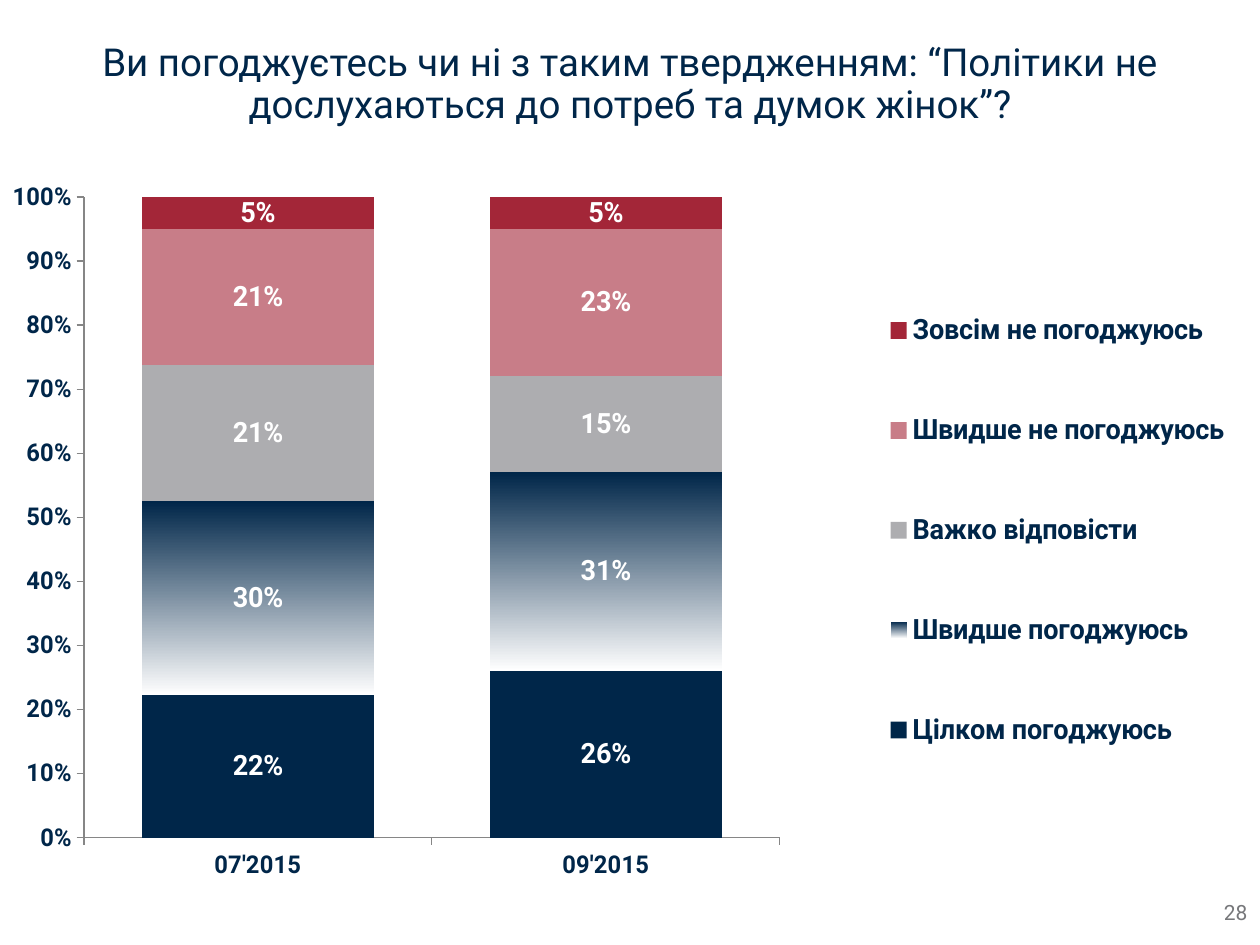
from dataclasses import dataclass

from lxml import etree
from pptx import Presentation
from pptx.chart.data import CategoryChartData
from pptx.dml.color import RGBColor
from pptx.enum.chart import XL_CHART_TYPE, XL_LEGEND_POSITION, XL_TICK_MARK
from pptx.enum.text import MSO_ANCHOR, MSO_AUTO_SIZE, PP_ALIGN
from pptx.oxml.ns import qn
from pptx.util import Inches, Pt

STACKED = XL_CHART_TYPE.COLUMN_STACKED_100
LEGEND_RIGHT = XL_LEGEND_POSITION.RIGHT
TICK_OUTSIDE = XL_TICK_MARK.OUTSIDE
TICK_NONE = XL_TICK_MARK.NONE
MIDDLE = MSO_ANCHOR.MIDDLE
NO_AUTOFIT = MSO_AUTO_SIZE.NONE
CENTER = PP_ALIGN.CENTER
RIGHT = PP_ALIGN.RIGHT

TITLE_ONLY = 5
PERCENT = "0%"
PERIODS = ["07'2015", "09'2015"]


@dataclass(frozen=True)
class Theme:
    font: str = "Roboto"
    navy: str = "002649"
    white: str = "FFFFFF"
    gray: str = "ADADB0"
    rose: str = "C87D88"
    red: str = "A32638"
    muted: str = "77787B"
    axis: str = "868686"
    title_size: int = 22
    label_size: int = 16
    axis_size: int = 14
    number_size: int = 12


THEME = Theme()

ANSWERS = [
    ("Цілком погоджуюсь", (0.22, 0.26), (THEME.navy,)),
    ("Швидше погоджуюсь", (0.30, 0.31), (THEME.navy, THEME.white)),
    ("Важко відповісти", (0.21, 0.15), (THEME.gray,)),
    ("Швидше не погоджуюсь", (0.21, 0.23), (THEME.rose,)),
    ("Зовсім не погоджуюсь", (0.05, 0.05), (THEME.red,)),
]


def format_font(font, size, color, bold=False):
    font.name = THEME.font
    font.size = Pt(size)
    font.bold = bold
    font.color.rgb = RGBColor.from_string(color)


def write_text(shape, text, size, color, align, line_spacing=1.0):
    frame = shape.text_frame
    frame.word_wrap = True
    frame.auto_size = NO_AUTOFIT
    frame.vertical_anchor = MIDDLE
    paragraph = frame.paragraphs[0]
    paragraph.alignment = align
    paragraph.line_spacing = line_spacing
    run = paragraph.add_run()
    run.text = text
    format_font(run.font, size, color)


def fill_with(fill, colors):
    if len(colors) == 1:
        fill.solid()
        fill.fore_color.rgb = RGBColor.from_string(colors[0])
        return
    fill.gradient()
    fill.gradient_angle = 270
    for stop, color in zip(fill.gradient_stops, colors):
        stop.color.rgb = RGBColor.from_string(color)


def set_layout(element, successors, box, inner=False):
    for old in element.findall(qn("c:layout")):
        element.remove(old)
    layout = etree.Element(qn("c:layout"))
    manual = etree.SubElement(layout, qn("c:manualLayout"))
    settings = [("layoutTarget", "inner")] if inner else []
    settings += [("xMode", "edge"), ("yMode", "edge")]
    settings += zip("xywh", box)
    for name, value in settings:
        etree.SubElement(manual, qn(f"c:{name}")).set("val", str(value))
    following = next(child for child in element if child.tag in map(qn, successors))
    following.addprevious(layout)


class SlideBuilder:
    def __init__(self, presentation):
        self.width = presentation.slide_width
        self.height = presentation.slide_height
        self.slide = presentation.slides.add_slide(presentation.slide_layouts[TITLE_ONLY])

    def box(self, left, top, width, height):
        return (int(left * self.width), int(top * self.height),
                int(width * self.width), int(height * self.height))

    def title(self, text, *shares):
        shape = self.slide.shapes.title
        shape.left, shape.top, shape.width, shape.height = self.box(*shares)
        write_text(shape, text, THEME.title_size, THEME.navy, CENTER, line_spacing=0.9)

    def page_number(self, text, *shares):
        shape = self.slide.shapes.add_textbox(*self.box(*shares))
        write_text(shape, text, THEME.number_size, THEME.muted, RIGHT)

    def stacked_chart(self, categories, answers, *shares):
        data = CategoryChartData(number_format=PERCENT)
        data.categories = categories
        for name, values, _ in answers:
            data.add_series(name, values)
        chart = self.slide.shapes.add_chart(STACKED, *self.box(*shares), data).chart
        chart.has_title = False
        chart.font.name = THEME.font
        plot = chart.plots[0]
        plot.gap_width = 50
        plot.overlap = 100
        for series, (_, _, colors) in zip(plot.series, answers):
            series.invert_if_negative = False
            fill_with(series.format.fill, colors)
            labels = series.data_labels
            labels.show_value = True
            labels.number_format = PERCENT
            labels.number_format_is_linked = False
            format_font(labels.font, THEME.label_size, THEME.white, bold=True)
        self.style_axes(chart)
        self.style_legend(chart)
        plot_area = chart.plots[0]._element.getparent()
        set_layout(plot_area, ["c:barChart"], (0.026, 0.043, 0.589, 0.869), inner=True)

    def style_axes(self, chart):
        for axis in (chart.category_axis, chart.value_axis):
            axis.has_major_gridlines = False
            axis.major_tick_mark = TICK_OUTSIDE
            axis.minor_tick_mark = TICK_NONE
            axis.format.line.color.rgb = RGBColor.from_string(THEME.axis)
            format_font(axis.tick_labels.font, THEME.axis_size, THEME.navy, bold=True)
        value_axis = chart.value_axis
        value_axis.minimum_scale = 0
        value_axis.maximum_scale = 1
        value_axis.major_unit = 0.1
        value_axis.tick_labels.number_format = PERCENT
        value_axis.tick_labels.number_format_is_linked = False

    def style_legend(self, chart):
        chart.has_legend = True
        legend = chart.legend
        legend.position = LEGEND_RIGHT
        legend.include_in_layout = False
        format_font(legend.font, THEME.label_size, THEME.navy, bold=True)
        set_layout(legend._element, ["c:overlay"], (0.7, 0.11, 0.3, 0.77))


def main():
    presentation = Presentation()
    presentation.slide_width = Inches(10)
    presentation.slide_height = Inches(7.5)
    builder = SlideBuilder(presentation)
    builder.title(
        "Ви погоджуєтесь чи ні з таким твердженням: “Політики не дослухаються до потреб та думок жінок”?",
        0.03, 0.07, 0.94, 0.04)
    builder.page_number("28", 0.775, 0.94, 0.225, 0.05)
    builder.stacked_chart(PERIODS, ANSWERS, 0.01, 0.175, 0.97, 0.78)
    presentation.save("out.pptx")


if __name__ == "__main__":
    main()
